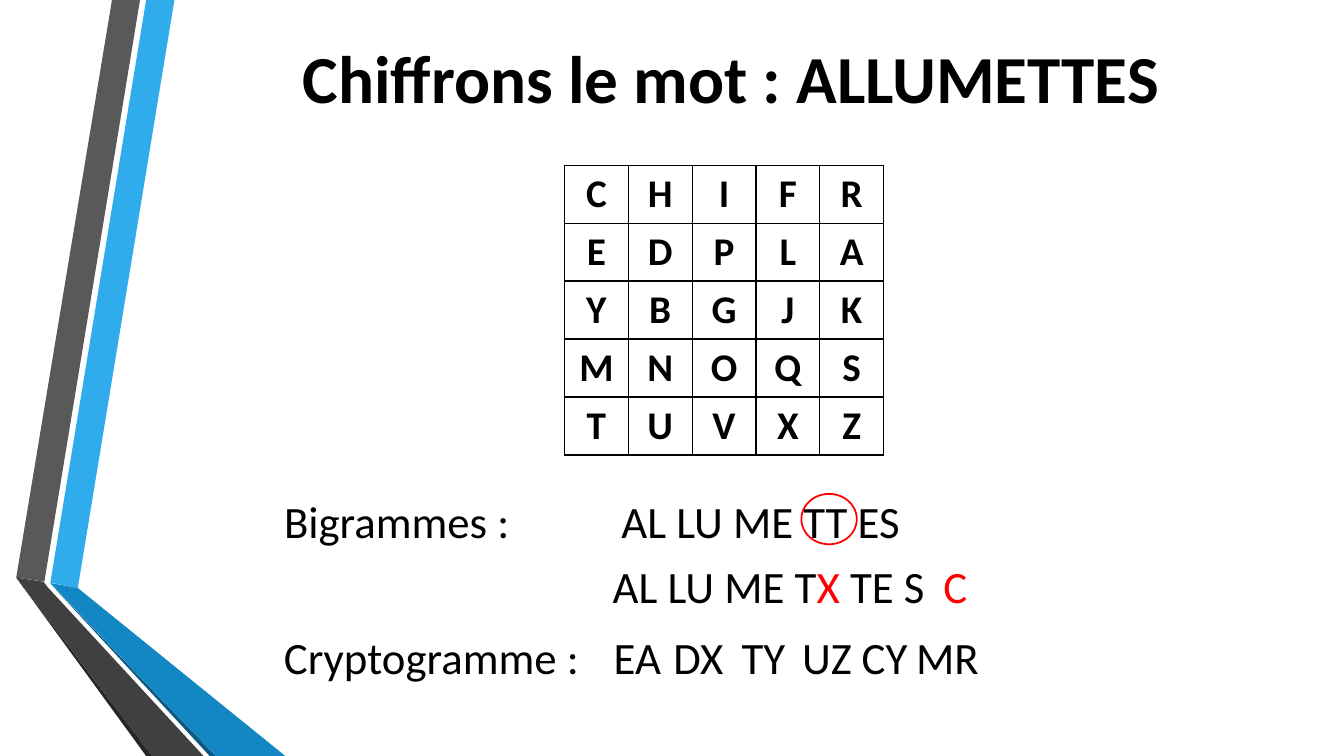
"""Build the slide that enciphers the word ALLUMETTES with a 5 by 5 letter grid."""
from lxml import etree
from pptx import Presentation
from pptx.dml.color import RGBColor
from pptx.enum.shapes import MSO_SHAPE
from pptx.enum.text import MSO_ANCHOR, PP_ALIGN
from pptx.oxml.ns import qn
from pptx.util import Pt

CENTER = PP_ALIGN.CENTER
MIDDLE = MSO_ANCHOR.MIDDLE
OVAL = MSO_SHAPE.OVAL
FONT = "Calibri"
COLORS = {
    "black": "000000", "red": "FF0000",
    "blue": "30ACEC", "mid_blue": "1287C3", "deep_blue": "0C5A82",
    "grey": "595959", "dark_grey": "404040", "deep_grey": "262626",
}


def color(name):
    return RGBColor.from_string(COLORS[name])


def add_line(left, top, width, parts, height=46, size=32, bold=False):
    frame = slide.shapes.add_textbox(Pt(left), Pt(top), Pt(width), Pt(height)).text_frame
    frame.word_wrap = True
    line = frame.paragraphs[0]
    line.font.name, line.font.size, line.font.bold = FONT, Pt(size), bold
    for text, color_name in parts:
        run = line.add_run()
        run.text = text
        run.font.color.rgb = color(color_name)
    return frame


prs = Presentation()
prs.slide_width, prs.slide_height = Pt(960), Pt(540)
slide = prs.slides.add_slide(prs.slide_layouts[6])

ribbons = [
    ("blue", [(36, 416.2), (55.6, 420), (124.6, 0), (104.4, 0)]),
    ("grey", [(100, 0), (80, 0), (11.6, 412.6), (31.7, 415.5)]),
    ("deep_grey", [(11.6, 412.6), (104.4, 540), (108.7, 540)]),
    ("deep_blue", [(36, 416.9), (149.8, 540), (154.1, 540)]),
    ("mid_blue", [(36, 416.5), (154.1, 540), (203.8, 540), (55.6, 420)]),
    ("dark_grey", [(145.4, 540), (34.6, 420), (31, 415.5), (11.6, 412.6), (108.7, 540)]),
]
for color_name, corners in ribbons:
    outline = slide.shapes.build_freeform(Pt(corners[0][0]), Pt(corners[0][1]))
    outline.add_line_segments([(Pt(x), Pt(y)) for x, y in corners[1:]])
    ribbon = outline.convert_to_shape()
    ribbon.shadow.inherit = False
    ribbon.fill.solid()
    ribbon.fill.fore_color.rgb = color(color_name)
    ribbon.line.fill.background()

title = add_line(121.7, -7.2, 801.4, [("Chiffrons le mot : ALLUMETTES", "black")],
                 height=124.6, size=48, bold=True)
title.vertical_anchor = MIDDLE
title.paragraphs[0].alignment = CENTER

key_rows = ["CHIFR", "EDPLA", "YBGJK", "MNOQS", "TUVXZ"]
column_width, row_height = 45.6, 41.4
key_grid = slide.shapes.add_table(5, 5, Pt(403.2), Pt(118), Pt(5 * column_width),
                                  Pt(5 * row_height)).table
key_grid.first_row = key_grid.horz_banding = False
for column in key_grid.columns:
    column.width = Pt(column_width)
for row, letters in zip(key_grid.rows, key_rows):
    row.height = Pt(row_height)
    for cell, letter in zip(row.cells, letters):
        cell.text = letter
        paragraph = cell.text_frame.paragraphs[0]
        paragraph.alignment = CENTER
        paragraph.font.name, paragraph.font.size, paragraph.font.bold = FONT, Pt(28), True
        paragraph.font.color.rgb = color("black")
        properties = cell._tc.get_or_add_tcPr()
        for side in ("a:lnL", "a:lnR", "a:lnT", "a:lnB"):
            border = etree.SubElement(properties, qn(side), w=str(Pt(1)))
            border_fill = etree.SubElement(border, qn("a:solidFill"))
            etree.SubElement(border_fill, qn("a:srgbClr"), val=COLORS["black"])
        cell.fill.background()

bigrams = add_line(195.8, 349.2, 680.4, [("Bigrammes :\tAL LU ME TT ES", "black")])
tabs = etree.SubElement(bigrams.paragraphs[0]._p.get_or_add_pPr(), qn("a:tabLst"))
etree.SubElement(tabs, qn("a:tab"), pos=str(Pt(241)), algn="l")
tabs.getparent().insert(0, tabs)

double_letter = slide.shapes.add_shape(OVAL, Pt(572.4), Pt(352.8), Pt(39.6), Pt(36))
double_letter.shadow.inherit = False
double_letter.fill.background()
double_letter.line.color.rgb = color("red")
double_letter.line.width = Pt(1.25)

add_line(430.6, 395.3, 259.2, [("AL LU ME T", "black"), ("X", "red"), (" TE S", "black")])
add_line(666.7, 395.3, 40.3, [("C", "red")])

cryptogram = [
    ("Cryptogramme :", 195.8, 244), ("EA", 431.3, 76), ("DX", 473.8, 59), ("TY", 522.7, 58),
    ("UZ", 565.9, 58), ("CY", 608.4, 68), ("MR", 647.3, 85),
]
for text, left, width in cryptogram:
    add_line(left, 446.4, width, [(text, "black")])

prs.save("out.pptx")
